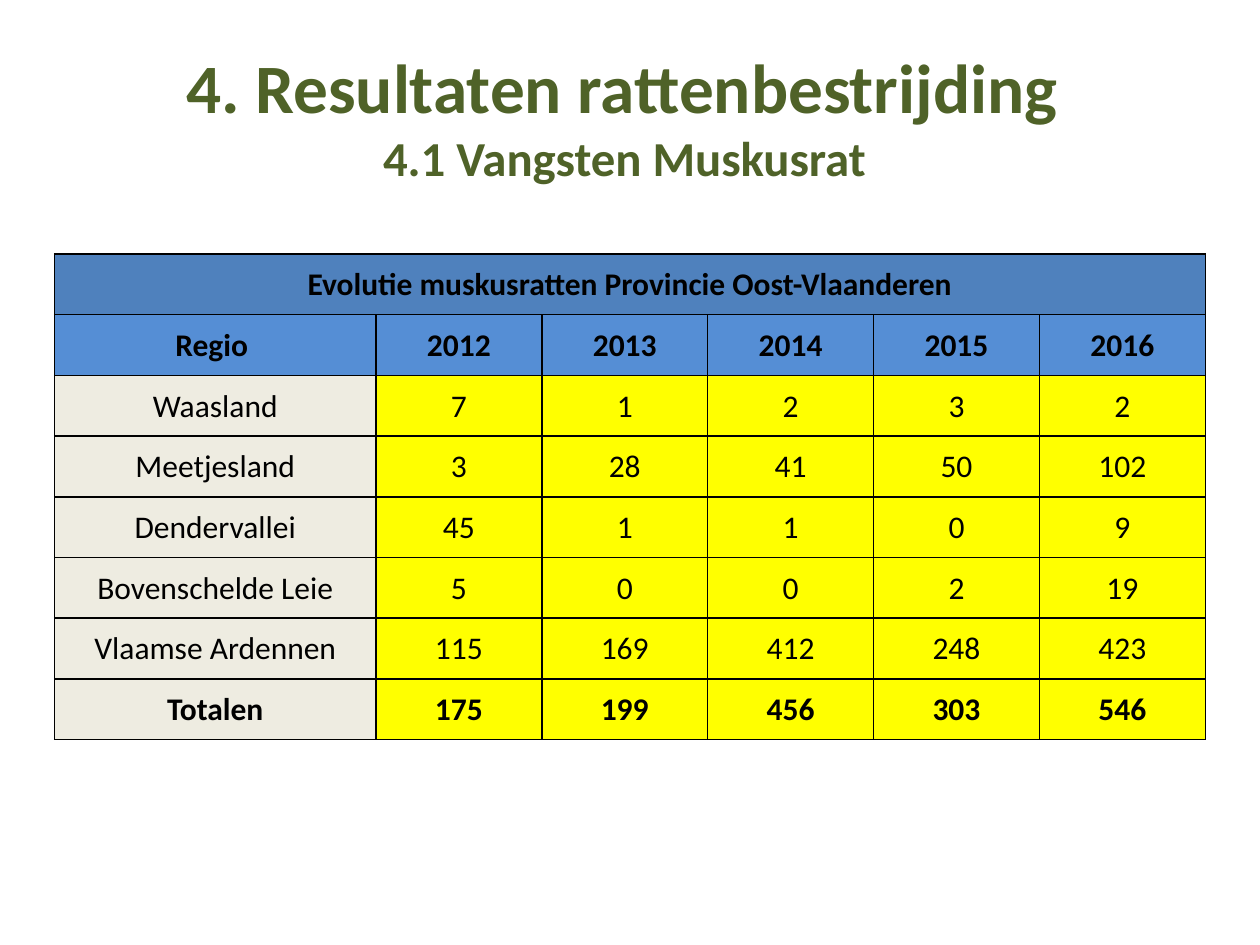
import dataclasses

import pptx
import pptx.dml.color
import pptx.enum.text
import pptx.oxml.ns
import pptx.util
from lxml import etree

Pt = pptx.util.Pt
Color = pptx.dml.color.RGBColor.from_string


@dataclasses.dataclass(frozen=True)
class Theme:
    font: str = "Calibri"
    title_color: str = "4F6228"
    text_color: str = "000000"
    border_color: str = "000000"
    caption_fill: str = "4F81BD"
    header_fill: str = "558ED5"
    region_fill: str = "EEECE1"
    value_fill: str = "FFFF00"
    title_size: float = 39.6
    subtitle_size: float = 27.9
    table_size: float = 18
    border_width: float = 1


THEME = Theme()
CAPTION = "Evolutie muskusratten Provincie Oost-Vlaanderen"
HEADER = ("Regio ", 2012, 2013, 2014, 2015, 2016)
CATCHES = (
    ("Waasland", 7, 1, 2, 3, 2),
    ("Meetjesland", 3, 28, 41, 50, 102),
    ("Dendervallei", 45, 1, 1, 0, 9),
    ("Bovenschelde Leie", 5, 0, 0, 2, 19),
    ("Vlaamse Ardennen", 115, 169, 412, 248, 423),
)
TOTALS = ("Totalen", 175, 199, 456, 303, 546)
REGION_WIDTH = 183.6
YEAR_WIDTH = 94.8
ROW_HEIGHT = 34.69


def format_paragraph(para, size, color, bold):
    para.alignment = pptx.enum.text.PP_ALIGN.CENTER
    para.font.name = THEME.font
    para.font.size = Pt(size)
    para.font.bold = bold
    para.font.color.rgb = Color(color)


def set_title(page, heading, subheading):
    title = page.shapes.title
    title.left, title.top = Pt(36), Pt(21)
    title.width, title.height = Pt(648), Pt(90)
    frame = title.text_frame
    frame.word_wrap = True
    frame.auto_size = pptx.enum.text.MSO_AUTO_SIZE.NONE
    frame.vertical_anchor = pptx.enum.text.MSO_ANCHOR.MIDDLE
    para = frame.paragraphs[0]
    format_paragraph(para, THEME.title_size, THEME.title_color, True)
    para.add_run().text = heading
    para.add_line_break()
    span = para.add_run()
    span.text = subheading
    span.font.size = Pt(THEME.subtitle_size)


def add_borders(cell):
    properties = cell._tc.get_or_add_tcPr()
    for side in ("lnL", "lnR", "lnT", "lnB"):
        line = etree.SubElement(properties, pptx.oxml.ns.qn(f"a:{side}"), w=str(Pt(THEME.border_width)))
        fill = etree.SubElement(line, pptx.oxml.ns.qn("a:solidFill"))
        etree.SubElement(fill, pptx.oxml.ns.qn("a:srgbClr"), val=THEME.border_color)


def style_cell(cell, fill, bold):
    add_borders(cell)
    cell.fill.solid()
    cell.fill.fore_color.rgb = Color(fill)
    cell.vertical_anchor = pptx.enum.text.MSO_ANCHOR.MIDDLE
    cell.margin_left = cell.margin_right = cell.margin_top = Pt(0.75)
    cell.margin_bottom = Pt(0)
    format_paragraph(cell.text_frame.paragraphs[0], THEME.table_size, THEME.text_color, bold)


def fill_row(cells, values, first_fill, other_fill, bold):
    for column, (cell, value) in enumerate(zip(cells, values)):
        cell.text = str(value)
        style_cell(cell, other_fill if column else first_fill, bold)


def add_catch_table(page):
    rows = len(CATCHES) + 3
    columns = len(HEADER)
    width = REGION_WIDTH + YEAR_WIDTH * (columns - 1)
    table = page.shapes.add_table(
        rows, columns, Pt(31.2), Pt(145.2), Pt(width), Pt(ROW_HEIGHT * rows)
    ).table
    for index, column in enumerate(table.columns):
        column.width = Pt(YEAR_WIDTH if index else REGION_WIDTH)
    for row in table.rows:
        row.height = Pt(ROW_HEIGHT)

    caption_row, header_row, *catch_rows, total_row = [row.cells for row in table.rows]
    for cell in caption_row:
        style_cell(cell, THEME.caption_fill, True)
    table.cell(0, 0).merge(table.cell(0, columns - 1))
    table.cell(0, 0).text_frame.paragraphs[0].add_run().text = CAPTION
    fill_row(header_row, HEADER, THEME.header_fill, THEME.header_fill, True)
    for cells, values in zip(catch_rows, CATCHES):
        fill_row(cells, values, THEME.region_fill, THEME.value_fill, False)
    fill_row(total_row, TOTALS, THEME.region_fill, THEME.value_fill, True)


def main():
    deck = pptx.Presentation()
    deck.slide_width, deck.slide_height = Pt(720), Pt(540)
    page = deck.slides.add_slide(deck.slide_layouts.get_by_name("Title Only"))
    set_title(page, "4. Resultaten rattenbestrijding ", "4.1 Vangsten Muskusrat ")
    add_catch_table(page)
    deck.save("out.pptx")


if __name__ == "__main__":
    main()
